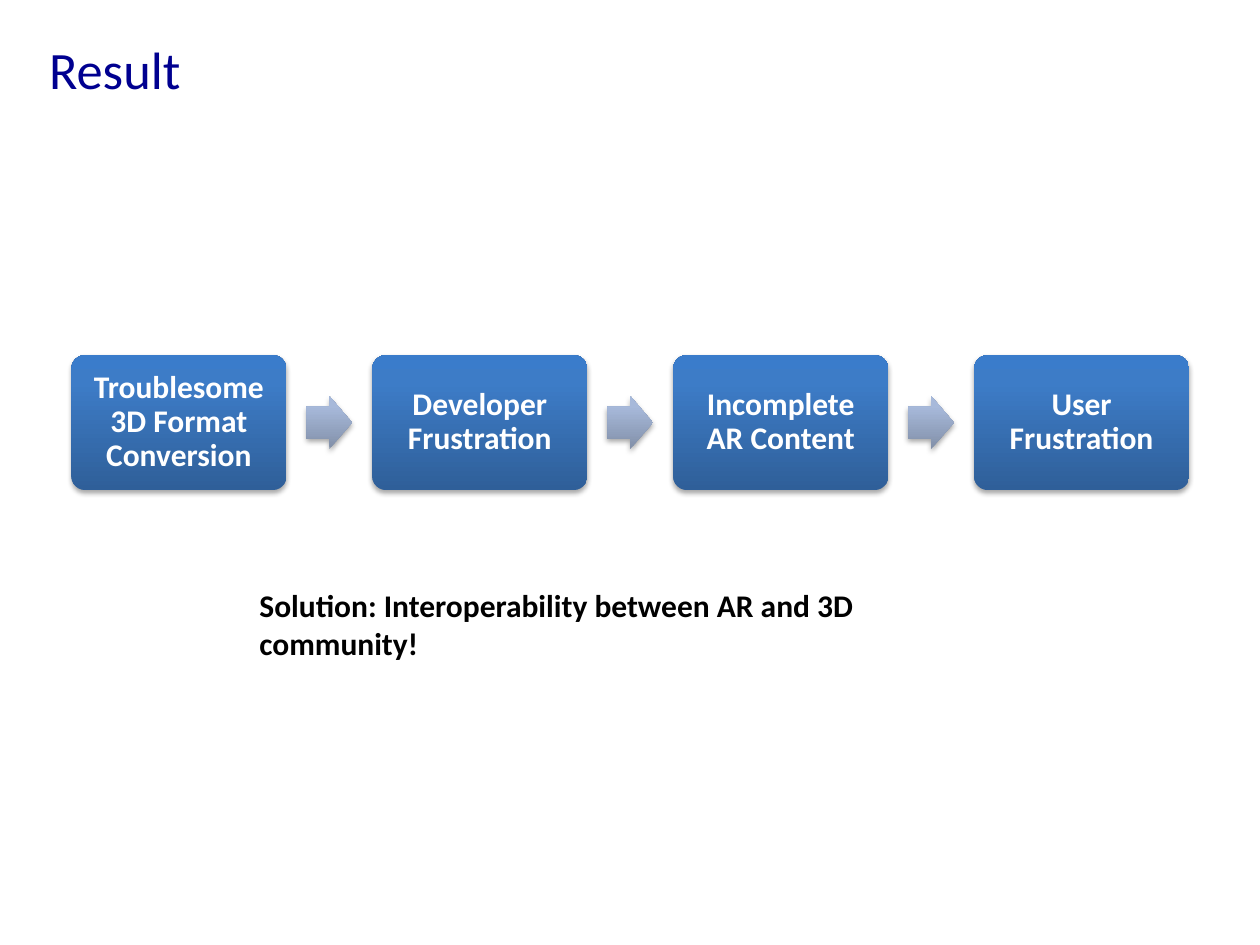
from dataclasses import dataclass

from lxml.etree import SubElement
from pptx import Presentation
from pptx.dml.color import RGBColor
from pptx.enum.shapes import MSO_SHAPE
from pptx.enum.text import MSO_ANCHOR, PP_ALIGN
from pptx.oxml.ns import qn
from pptx.util import Cm, Pt


@dataclass(frozen=True)
class Theme:
    """Colours, gradients and type sizes of the slide."""
    font: str = "Calibri"
    title_size: int = 30
    text_size: int = 18
    title: str = "000090"
    text: str = "000000"
    step_text: str = "FFFFFF"
    shadow: str = "000000"
    step_fill: tuple = ((0, "2F5F99"), (80, "3D7CC7"), (100, "3A7CCB"))
    arrow_fill: tuple = ((0, "818FA8"), (80, "A7B9DA"), (100, "A7BADC"))


@dataclass(frozen=True)
class Box:
    """A rectangle in centimetres."""
    left: float
    top: float
    width: float
    height: float

    def lengths(self):
        """Return left, top, width and height as slide lengths."""
        return Cm(self.left), Cm(self.top), Cm(self.width), Cm(self.height)


THEME = Theme()


def write_text(shape, text, size=THEME.text_size, color=THEME.text, bold=False,
               align=PP_ALIGN.LEFT, anchor=MSO_ANCHOR.TOP, line_spacing=1.0,
               margins=(0.25, 0.13)):
    """Write one formatted paragraph into a shape."""
    frame = shape.text_frame
    frame.word_wrap = True
    frame.vertical_anchor = anchor
    frame.margin_left = frame.margin_right = Cm(margins[0])
    frame.margin_top = frame.margin_bottom = Cm(margins[1])
    paragraph = frame.paragraphs[0]
    paragraph.alignment = align
    paragraph.line_spacing = line_spacing
    run = paragraph.add_run()
    run.text = text
    run.font.name = THEME.font
    run.font.size = Pt(size)
    run.font.bold = bold
    run.font.color.rgb = RGBColor.from_string(color)


def apply_gradient(shape, stops):
    """Fill a shape with a gradient that runs from bottom to top."""
    shape.fill.gradient()
    gradient = shape._element.spPr.find(qn("a:gradFill"))
    stop_list = gradient.find(qn("a:gsLst"))
    for stop in list(stop_list):
        stop_list.remove(stop)
    for position, color in stops:
        stop = SubElement(stop_list, qn("a:gs"), pos=str(position * 1000))
        SubElement(stop, qn("a:srgbClr"), val=color)
    gradient.find(qn("a:lin")).set("ang", str(270 * 60000))


def apply_shadow(shape):
    """Give a shape a soft shadow that falls downwards."""
    shape.shadow.inherit = False
    effects = shape._element.spPr.find(qn("a:effectLst"))
    shadow = SubElement(effects, qn("a:outerShdw"), blurRad=str(Pt(3.1)),
                        dist=str(Pt(1.8)), dir=str(90 * 60000), rotWithShape="0")
    color = SubElement(shadow, qn("a:srgbClr"), val=THEME.shadow)
    SubElement(color, qn("a:alpha"), val="35000")


def add_block(shapes, kind, box, adjustments, stops):
    """Add a borderless gradient shape with a shadow."""
    shape = shapes.add_shape(kind, *box.lengths())
    for index, value in enumerate(adjustments):
        shape.adjustments[index] = value
    apply_gradient(shape, stops)
    shape.line.fill.background()
    apply_shadow(shape)
    return shape


def place_title(slide, box, text):
    """Move the title placeholder into the box and fill it."""
    title = slide.shapes.title
    title.left, title.top, title.width, title.height = box.lengths()
    write_text(title, text, size=THEME.title_size, color=THEME.title,
               line_spacing=0.85)


def place_process(slide, box, steps):
    """Spread the steps evenly over the box with an arrow in each gap."""
    shapes = slide.shapes.add_group_shape().shapes
    gap_ratio = 0.4
    step_width = box.width / (len(steps) + gap_ratio * (len(steps) - 1))
    gap = gap_ratio * step_width
    arrow_width, arrow_height = 0.92, 1.07
    for index, text in enumerate(steps):
        left = box.left + index * (step_width + gap)
        if index:
            arrow_box = Box(left - (gap + arrow_width) / 2,
                            box.top + (box.height - arrow_height) / 2,
                            arrow_width, arrow_height)
            add_block(shapes, MSO_SHAPE.RIGHT_ARROW, arrow_box, (0.6, 0.5),
                      THEME.arrow_fill)
        step = add_block(shapes, MSO_SHAPE.ROUNDED_RECTANGLE,
                         Box(left, box.top, step_width, box.height), (0.1,),
                         THEME.step_fill)
        write_text(step, text, color=THEME.step_text, bold=True,
                   align=PP_ALIGN.CENTER, anchor=MSO_ANCHOR.MIDDLE,
                   line_spacing=0.9, margins=(0.18, 0.18))


def place_solution(slide, box, text):
    """Add the concluding statement in the box."""
    write_text(slide.shapes.add_textbox(*box.lengths()), text, bold=True)


def main():
    """Build the slide and save it."""
    presentation = Presentation()
    presentation.slide_width, presentation.slide_height = Cm(25.4), Cm(19.05)
    slide = presentation.slides.add_slide(presentation.slide_layouts[5])
    place_title(slide, Box(0.74, 0.81, 23.16, 1.37), "Result")
    place_process(slide, Box(1.44, 7.16, 22.53, 2.72), (
        "Troublesome 3D Format Conversion",
        "Developer Frustration",
        "Incomplete AR Content",
        "User Frustration",
    ))
    place_solution(slide, Box(4.98, 11.68, 15.04, 1.02),
                   "Solution: Interoperability between AR and 3D community!")
    presentation.save("out.pptx")


if __name__ == "__main__":
    main()
